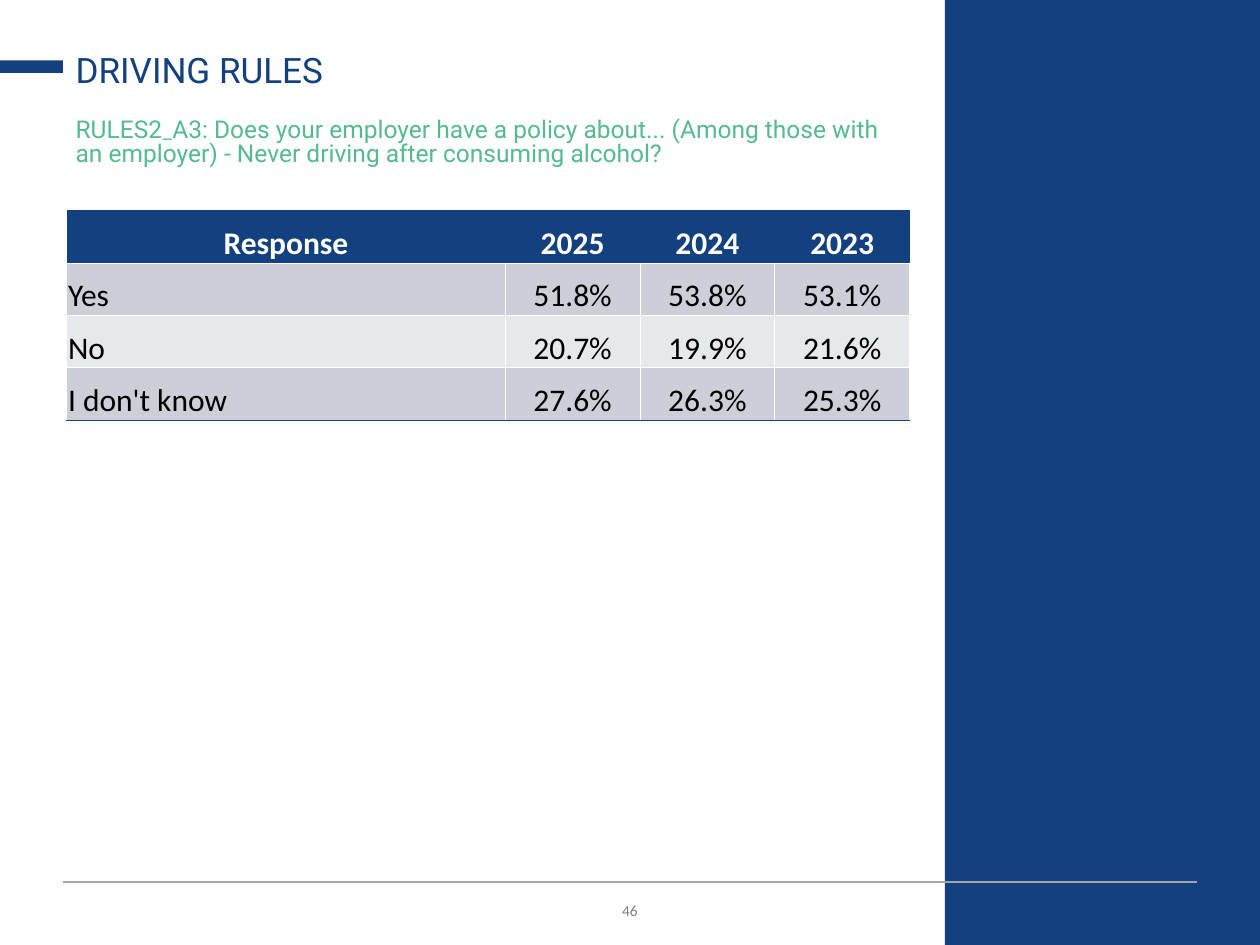
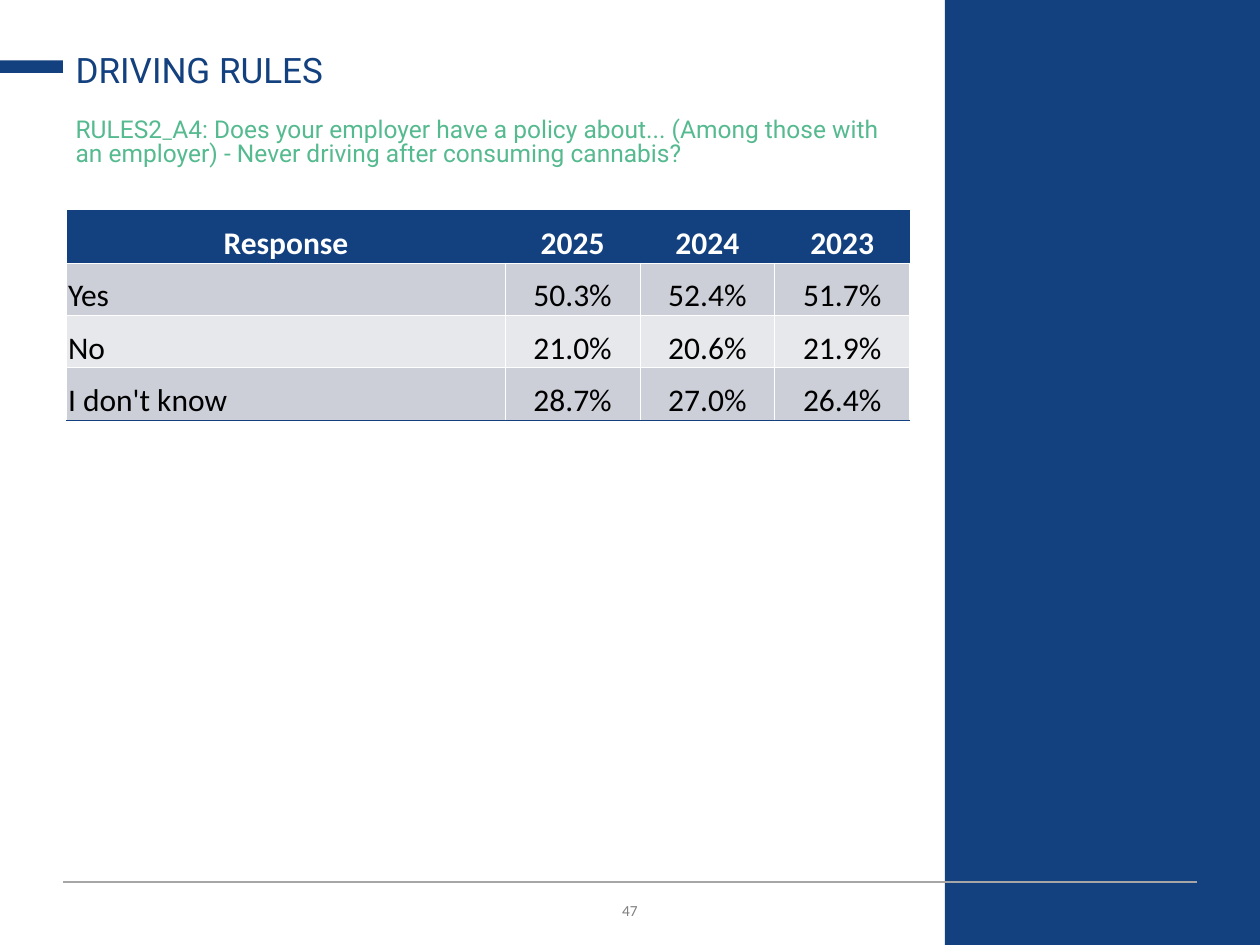
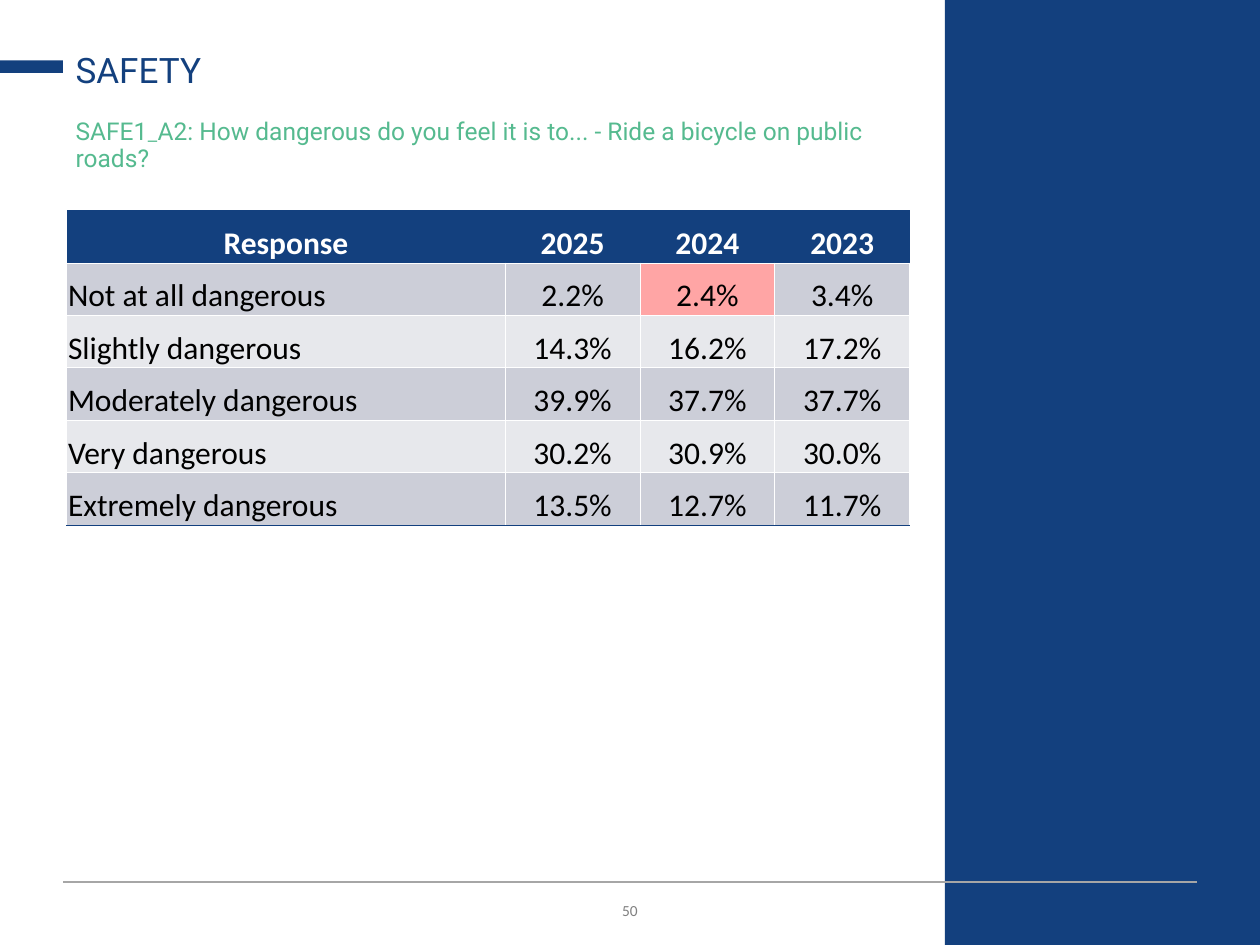
from dataclasses import dataclass
from typing import Optional

from lxml import etree
from pptx import Presentation
from pptx import util as u
from pptx.dml.color import RGBColor
from pptx.enum import shapes, text
from pptx.oxml.ns import qn

NAVY, GREEN, PINK = "13407E", "55BA8F", "FFA5A5"
WHITE, BLACK, GREY, RULE = "FFFFFF", "000000", "808080", "A6A6A6"
BANDS = "CCCED8", "E7E8EC"
HEAD = "Response", "2025", "2024", "2023"
COLS = 3.48, 1.07, 1.07, 1.07
ROW = u.Inches(5) // 12
LEFT, MID = text.PP_ALIGN.LEFT, text.PP_ALIGN.CENTER
LOW = text.MSO_ANCHOR.BOTTOM


@dataclass
class Page:
    num: int
    title: str
    ask: str
    rows: list[tuple[str, ...]]
    lead: float = 0.9  # line spacing of the question
    mark: Optional[tuple[int, int]] = None  # row and column of the marked cell


PAGES = [
    Page(46, "DRIVING RULES",
         "RULES2_A3: Does your employer have a policy about... (Among those with "
         "an employer) - Never driving after consuming alcohol?",
         [("Yes", "51.8%", "53.8%", "53.1%"),
          ("No", "20.7%", "19.9%", "21.6%"),
          ("I don't know", "27.6%", "26.3%", "25.3%")], lead=0.8),
    Page(47, "DRIVING RULES",
         "RULES2_A4: Does your employer have a policy about... (Among those with "
         "an employer) - Never driving after consuming cannabis?",
         [("Yes", "50.3%", "52.4%", "51.7%"),
          ("No", "21.0%", "20.6%", "21.9%"),
          ("I don't know", "28.7%", "27.0%", "26.4%")], lead=0.8),
    Page(50, "SAFETY",
         "SAFE1_A2: How dangerous do you feel it is to... - Ride a bicycle on "
         "public roads?",
         [("Not at all dangerous", "2.2%", "2.4%", "3.4%"),
          ("Slightly dangerous", "14.3%", "16.2%", "17.2%"),
          ("Moderately dangerous", "39.9%", "37.7%", "37.7%"),
          ("Very dangerous", "30.2%", "30.9%", "30.0%"),
          ("Extremely dangerous", "13.5%", "12.7%", "11.7%")], mark=(1, 2)),
]


def rgb(code: str) -> RGBColor:
    return RGBColor.from_string(code)


def place(shape, *box: float) -> None:
    shape.left, shape.top, shape.width, shape.height = map(u.Inches, box)


def write(frame, words: str, *, size: float, color: str, font: str = "Calibri",
          bold: bool = False, align=LEFT, lead: float = 1, anchor=None,
          small: bool = False) -> None:
    """Fill a text frame with one paragraph; underscores get their own font."""
    frame.word_wrap = True
    frame.vertical_anchor = anchor
    para = frame.paragraphs[0]
    para.alignment, para.line_spacing = align, lead
    para.space_before = u.Pt(0)
    first, mark, rest = words.partition("_")
    for part, face in (first, font), (mark, "League Spartan"), (rest, font):
        if not part:
            continue
        run = para.add_run()
        run.text = part
        run.font.name, run.font.size, run.font.bold = face, u.Pt(size), bold
        run.font.color.rgb = rgb(color)
        if small:
            run.font._element.set("cap", "small")


def block(slide, *box: float) -> None:
    shape = slide.shapes.add_shape(shapes.MSO_SHAPE.RECTANGLE, *map(u.Inches, box))
    shape.shadow.inherit = False
    shape.fill.solid()
    shape.fill.fore_color.rgb = rgb(NAVY)
    shape.line.fill.background()


def frame(slide, num: int) -> None:
    """Draw the side panel, title bar, footer rule and page number."""
    block(slide, 7.5, 0, 2.5, 7.5)
    block(slide, 0, 0.48, 0.5, 0.1)
    rule = slide.shapes.add_connector(
        shapes.MSO_CONNECTOR.STRAIGHT, *map(u.Inches, (0.5, 7, 9.5, 7)))
    rule.line.color.rgb = rgb(RULE)
    rule.line.width = u.Pt(0.75)
    etree.SubElement(rule._element.spPr, qn("a:effectLst"))
    foot = slide.shapes.add_textbox(*map(u.Inches, (0.5, 7.06, 9, 0.3)))
    write(foot.text_frame, str(num), size=11, color=GREY, align=MID,
          anchor=text.MSO_ANCHOR.MIDDLE, small=True)


def heads(slide, page: Page) -> None:
    title, body = slide.shapes.title, slide.placeholders[1]
    place(title, 0.5, 0.29, 6.7, 0.48)
    place(body, 0.5, 0.9, 6.7, 0.67)
    for shape in title, body:
        shape.text_frame.auto_size = text.MSO_AUTO_SIZE.NONE
    props = body.text_frame.paragraphs[0]._p.get_or_add_pPr()
    props.set("marL", "0")
    props.set("indent", "0")
    etree.SubElement(props, qn("a:buNone"))
    write(title.text_frame, page.title, size=20, color=NAVY, font="Roboto",
          lead=0.9, anchor=LOW)
    write(body.text_frame, page.ask, size=14, color=GREEN, font="Roboto",
          lead=page.lead, anchor=text.MSO_ANCHOR.TOP)


def edge(cell, side: str, color: Optional[str]) -> None:
    line = etree.SubElement(cell._tc.get_or_add_tcPr(), qn(f"a:ln{side}"),
                            w=str(u.Pt(0.5)))
    if color is None:
        etree.SubElement(line, qn("a:noFill"))
    else:
        fill = etree.SubElement(line, qn("a:solidFill"))
        etree.SubElement(fill, qn("a:srgbClr"), val=color)


def grid(slide, page: Page) -> None:
    rows = [HEAD, *page.rows]
    table = slide.shapes.add_table(
        len(rows), len(COLS), u.Inches(0.53), u.Inches(1.67),
        u.Inches(sum(COLS)), ROW * len(rows)).table
    for col, width in zip(table.columns, COLS):
        col.width = u.Inches(width)
    for r, row in enumerate(rows):
        head, last = r == 0, r == len(rows) - 1
        table.rows[r].height = ROW
        for c, words in enumerate(row):
            cell = table.cell(r, c)
            for side in "LRT":
                edge(cell, side, None if head else WHITE)
            edge(cell, "B", NAVY if last else WHITE)
            tint = NAVY if head else BANDS[(r - 1) % 2]
            cell.fill.solid()
            cell.fill.fore_color.rgb = rgb(PINK if (r, c) == page.mark else tint)
            cell.margin_left = cell.margin_right = cell.margin_top = u.Inches(0.01)
            cell.margin_bottom = 0
            cell.vertical_anchor = LOW
            write(cell.text_frame, words, size=18, bold=head, anchor=None,
                  color=WHITE if head else BLACK,
                  align=MID if head or c else LEFT)


def main() -> None:
    deck = Presentation()
    deck.slide_width, deck.slide_height = u.Inches(10), u.Inches(7.5)
    for page in PAGES:
        slide = deck.slides.add_slide(deck.slide_layouts[1])
        frame(slide, page.num)
        heads(slide, page)
        grid(slide, page)
    deck.save("out.pptx")


if __name__ == "__main__":
    main()
